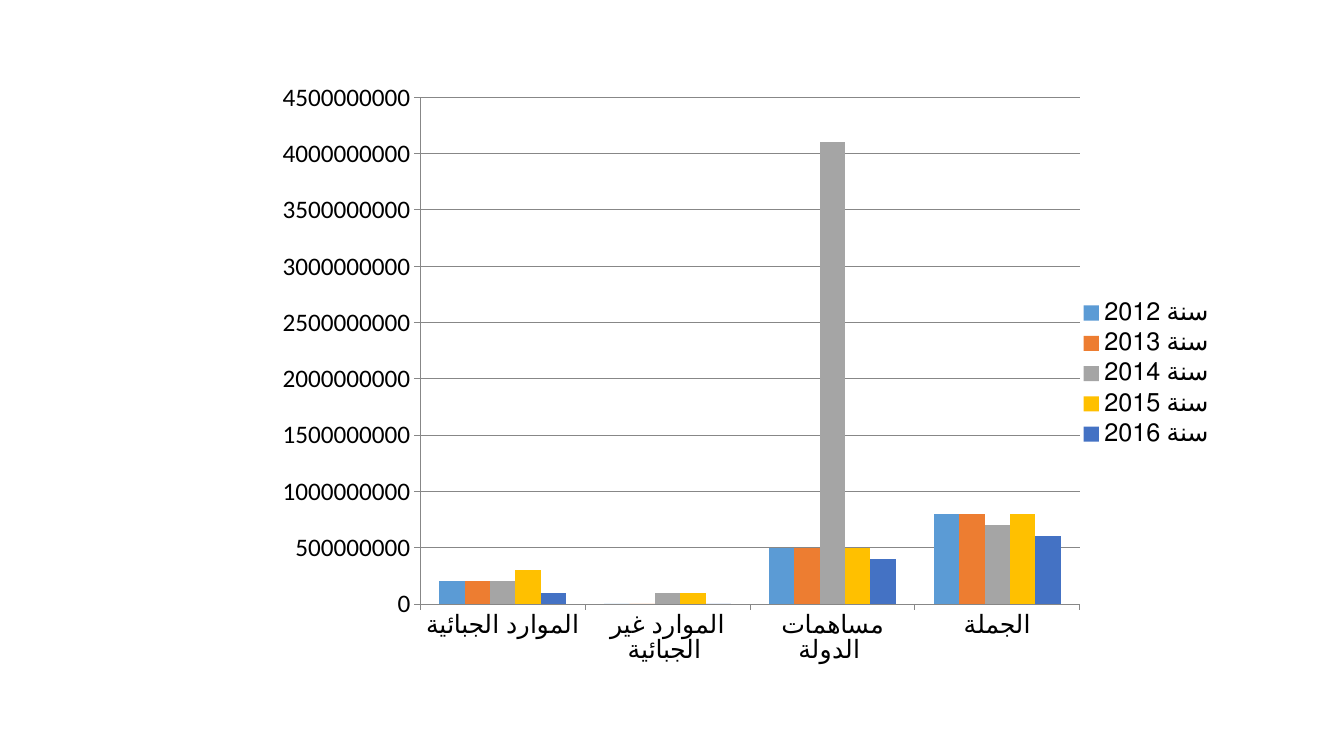
from dataclasses import dataclass

from pptx import Presentation
from pptx.chart.data import CategoryChartData
from pptx.dml.color import RGBColor
from pptx.enum.chart import XL_CHART_TYPE, XL_LEGEND_POSITION, XL_TICK_MARK
from pptx.oxml import parse_xml
from pptx.oxml.ns import nsdecls, qn
from pptx.util import Cm, Pt

UNIT = 100_000_000
GROUPS = ["الموارد الجبائية ", "الموارد غير الجبائية ", "مساهمات الدولة ", "الجملة"]
# Hundreds of millions per group
YEARS = {
    "سنة 2012": (2, 0, 5, 8),
    "سنة 2013": (2, 0, 5, 8),
    "سنة 2014": (2, 1, 41, 7),
    "سنة 2015": (3, 1, 5, 8),
    "سنة 2016": (1, 0, 4, 6),
}
# Left, top, width and height in cm; the plot lies inside the frame
FRAME = (6.19, 1.73, 24.69, 15.37)
PLOT = (4.4, 0.72, 16.62, 12.77)


@dataclass(frozen=True)
class Theme:
    font: str = "Calibri"
    size: int = 18
    ink: str = "000000"
    rule: str = "878787"
    thin: float = 0.5
    bars: tuple = ("5B9BD5", "ED7D31", "A5A5A5", "FFC000", "4472C4")


THEME = Theme()


def style(text, *, font=THEME.font, size=THEME.size, color=THEME.ink):
    """Format any object that has a font."""
    text.font.name = font
    text.font.size = Pt(size)
    text.font.color.rgb = RGBColor.from_string(color)


def rule(line):
    line.color.rgb = RGBColor.from_string(THEME.rule)
    line.width = Pt(THEME.thin)


def place(area, box):
    """Fix the inner plot area, given in cm, as fractions of the frame."""
    for old in area.findall(qn("c:layout")):
        area.remove(old)
    wide, high = FRAME[2:]
    parts = zip("xywh", box, (wide, high, wide, high))
    modes = "".join(f'<c:{k}Mode val="edge"/>' for k in "xy")
    sides = "".join(f'<c:{k} val="{n / full}"/>' for k, n, full in parts)
    area.insert(0, parse_xml(
        f'<c:layout {nsdecls("c")}><c:manualLayout><c:layoutTarget val="inner"/>'
        f"{modes}{sides}</c:manualLayout></c:layout>"))


def draw(slide):
    data = CategoryChartData(number_format="0")
    data.categories = GROUPS
    for year, sums in YEARS.items():
        data.add_series(year, [n * UNIT for n in sums])
    chart = slide.shapes.add_chart(
        XL_CHART_TYPE.COLUMN_CLUSTERED, *map(Cm, FRAME), data).chart
    style(chart)
    chart.has_title = False

    chart.has_legend = True
    chart.legend.position = XL_LEGEND_POSITION.RIGHT
    chart.legend.include_in_layout = False
    style(chart.legend)

    for axis in (chart.category_axis, chart.value_axis):
        axis.major_tick_mark = XL_TICK_MARK.OUTSIDE
        axis.minor_tick_mark = XL_TICK_MARK.NONE
        rule(axis.format.line)
        style(axis.tick_labels)
    scale = chart.value_axis
    scale.minimum_scale, scale.maximum_scale = 0, 45 * UNIT
    scale.major_unit = 5 * UNIT
    scale.has_major_gridlines = True
    rule(scale.major_gridlines.format.line)
    scale.tick_labels.number_format = "0"
    scale.tick_labels.number_format_is_linked = False

    plot = chart.plots[0]
    plot.gap_width, plot.overlap = 150, 0
    plot.vary_by_categories = False
    for bars, color in zip(plot.series, THEME.bars):
        bars.format.fill.solid()
        bars.format.fill.fore_color.rgb = RGBColor.from_string(color)
    place(chart.element.find(".//" + qn("c:plotArea")), PLOT)


def main():
    deck = Presentation()
    deck.slide_width, deck.slide_height = Cm(33.87), Cm(19.05)
    draw(deck.slides.add_slide(deck.slide_layouts[6]))
    deck.save("out.pptx")


if __name__ == "__main__":
    main()
